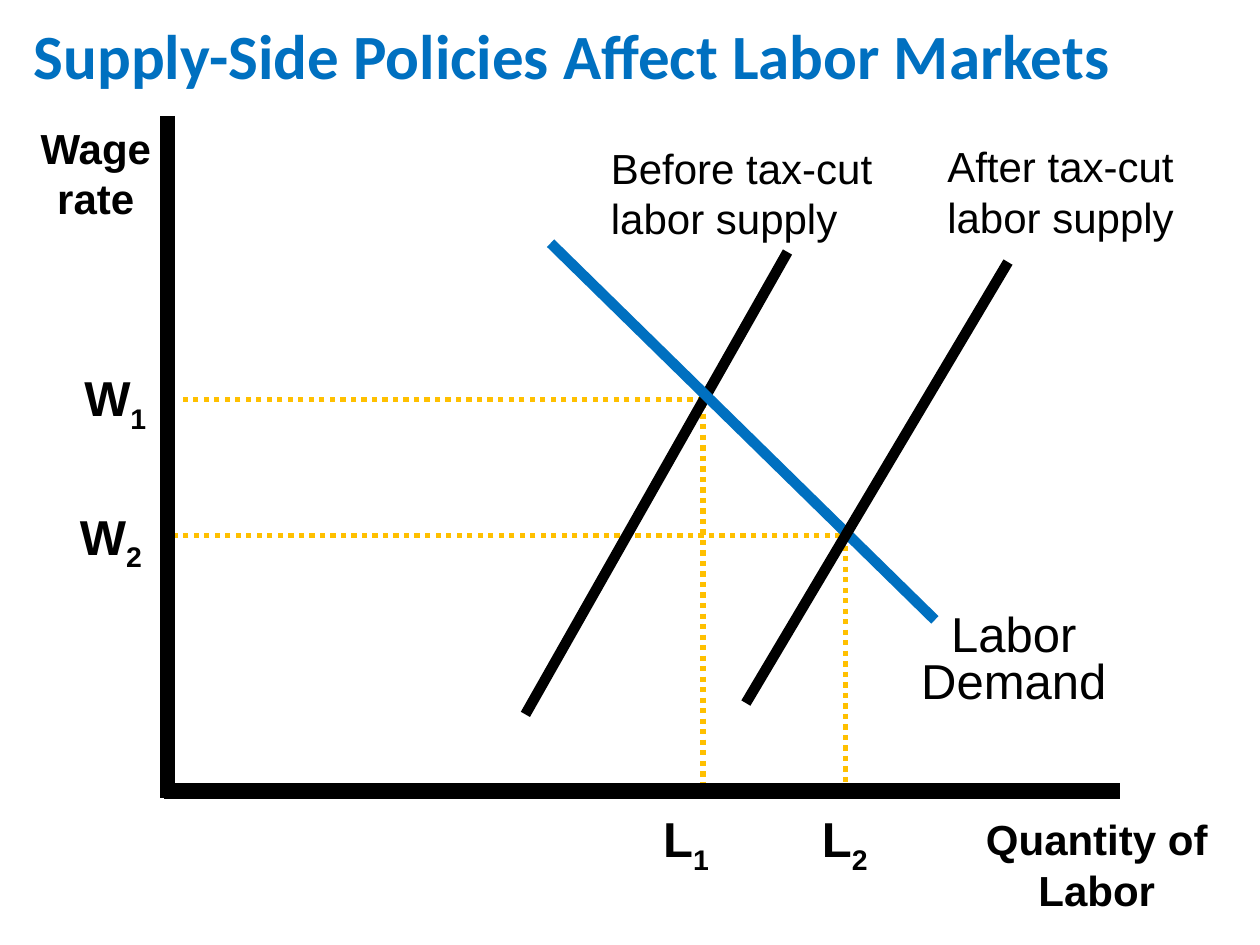
from pptx import Presentation
from pptx.dml.color import RGBColor
from pptx.enum.dml import MSO_LINE as Dash
from pptx.enum.shapes import MSO_CONNECTOR as Conn
from pptx.enum.text import PP_ALIGN as Align
from pptx.oxml.ns import qn
from pptx.util import Inches, Pt
from lxml.etree import SubElement

BLACK = RGBColor(0x00, 0x00, 0x00)
WHITE = RGBColor(0xFF, 0xFF, 0xFF)
BLUE = RGBColor(0x00, 0x70, 0xC0)
GOLD = RGBColor(0xFF, 0xC0, 0x00)


class Graph:
    face = "Arial"

    def __init__(self, slide):
        self.slide = slide

    def line(self, start, end, color=BLACK, width=6, dash=None):
        ends = [Inches(n) for n in (*start, *end)]
        line = self.slide.shapes.add_connector(Conn.STRAIGHT, *ends)
        line.line.color.rgb = color
        line.line.width = Pt(width)
        if dash:
            line.line.dash_style = dash
        SubElement(line._element.spPr, qn("a:effectLst"))

    def guide(self, start, end):
        self.line(start, end, GOLD, 3, Dash.ROUND_DOT)

    def text(self, words, place, size=24, bold=False, align=Align.CENTER,
             space=1.0, color=BLACK, face=None):
        box = self.slide.shapes.add_textbox(*[Inches(n) for n in place])
        box.text_frame.word_wrap = True
        para = box.text_frame.paragraphs[0]
        para.alignment = align
        para.line_spacing = space
        font = para.font
        font.name = face or self.face
        font.size = Pt(size)
        font.bold = bold
        font.color.rgb = color
        para.add_run().text = words
        return box

    def mark(self, letter, index, place):
        box = self.text(letter, place, 28, True, space=0.8)
        low = box.text_frame.paragraphs[0].add_run()
        low.text = index
        low.font._element.set("baseline", "-25000")

    def title(self, words, place):
        box = self.text(words, place, 36, True, Align.LEFT,
                        color=BLUE, face="Calibri")
        box.fill.solid()
        box.fill.fore_color.rgb = WHITE


def main():
    deck = Presentation()
    deck.slide_width, deck.slide_height = Inches(10), Inches(7.5)
    graph = Graph(deck.slides.add_slide(deck.slide_layouts[6]))

    graph.title("Supply-Side Policies Affect Labor Markets",
                (0.17, 0.08, 9.58, 0.71))

    graph.guide((6.71, 4.33), (6.71, 6.33))
    graph.guide((5.58, 3.2), (5.58, 6.25))
    graph.guide((6.67, 4.25), (1.33, 4.25))
    graph.guide((5.58, 3.17), (1.42, 3.17))

    graph.line((1.33, 0.92), (1.33, 6.33), width=9)
    graph.line((6.25, 2), (4.17, 5.67))
    graph.line((4.37, 1.93), (7.42, 4.92), BLUE)
    graph.line((1.3, 6.28), (8.89, 6.28), width=9)
    graph.line((8, 2.08), (5.92, 5.58))

    graph.mark("W", "1", (0.41, 2.92, 1.01, 0.48))
    graph.mark("W", "2", (0.43, 4.02, 0.9, 0.48))
    graph.mark("L", "1", (5, 6.42, 0.89, 0.48))
    graph.mark("L", "2", (6.08, 6.42, 1.25, 0.48))

    graph.text("Wage rate", (0.02, 0.92, 1.48, 0.91), bold=True)
    graph.text("Quantity of Labor", (7.54, 6.41, 2.33, 0.91), bold=True)
    graph.text("Labor Demand", (7.17, 4.83, 1.75, 0.85), 28, space=0.8)
    graph.text("Before tax-cut labor supply", (4.75, 1.08, 2.58, 0.83),
               align=Align.LEFT)
    graph.text("After tax-cut labor supply", (7.42, 1.07, 2.58, 0.83),
               align=Align.LEFT)

    deck.save("out.pptx")


if __name__ == "__main__":
    main()
